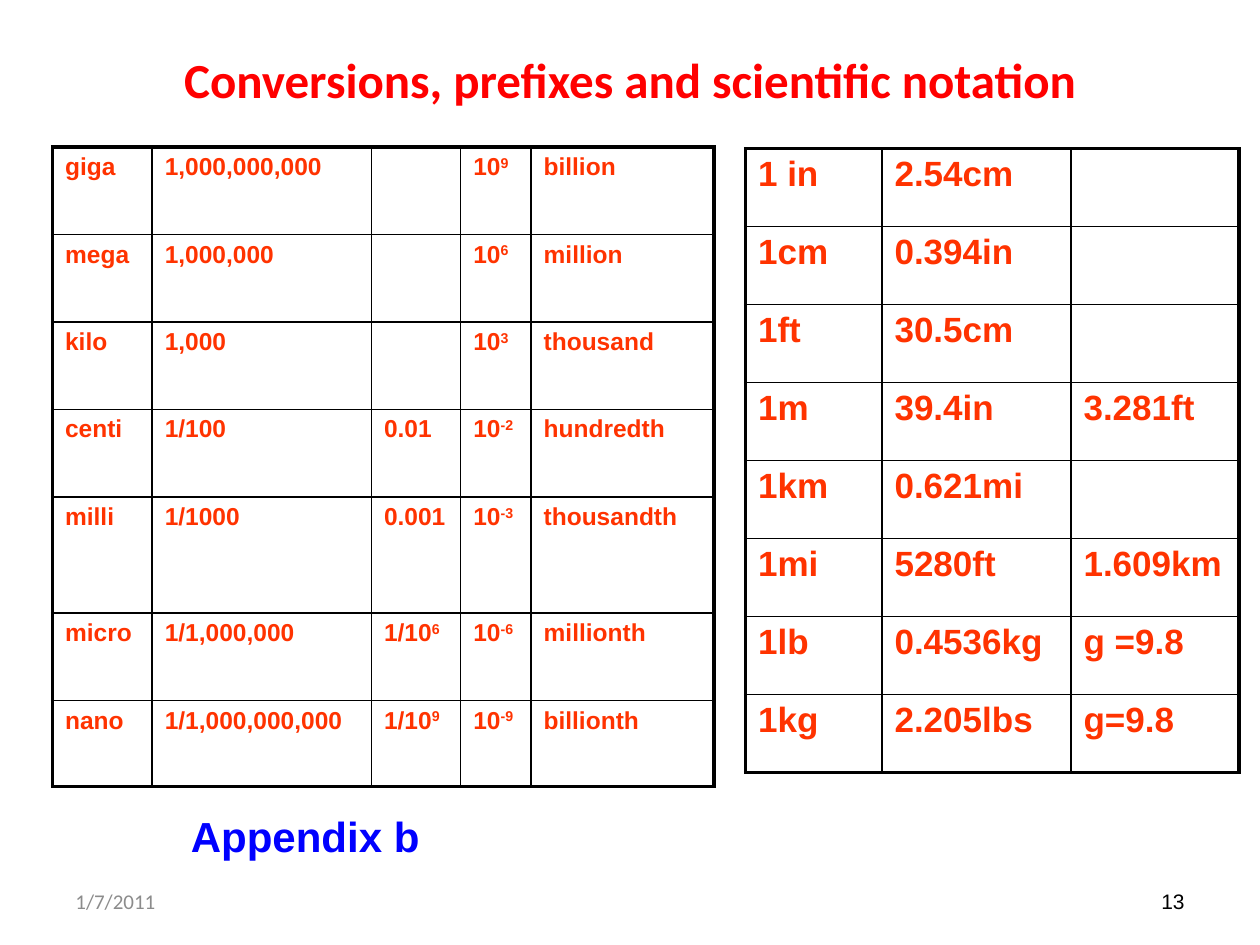
from lxml import etree
from pptx import Presentation
from pptx.dml.color import RGBColor
from pptx.enum.text import MSO_ANCHOR, PP_ALIGN
from pptx.oxml.ns import qn
from pptx.util import Pt

LEFT, MID, RIGHT = PP_ALIGN.LEFT, PP_ALIGN.CENTER, PP_ALIGN.RIGHT
TOP, CENTER = MSO_ANCHOR.TOP, MSO_ANCHOR.MIDDLE

POWERS = [
    ["giga", "1,000,000,000", "", "10^9", "billion"],
    ["mega", "1,000,000", "", "10^6", "million"],
    ["kilo", "1,000", "", "10^3", "thousand"],
    ["centi", "1/100", "0.01", "10^-2", "hundredth"],
    ["milli", "1/1000", "0.001", "10^-3", "thousandth"],
    ["micro", "1/1,000,000", "1/10^6", "10^-6", "millionth"],
    ["nano", "1/1,000,000,000", "1/10^9", "10^-9", "billionth"],
]
UNITS = [
    ["1 in", "2.54cm", ""],
    ["1cm", "0.394in", ""],
    ["1ft", "30.5cm", ""],
    ["1m", "39.4in", "3.281ft"],
    ["1km", "0.621mi", ""],
    ["1mi", "5280ft", "1.609km"],
    ["1lb", "0.4536kg", "g =9.8"],
    ["1kg", "2.205lbs", "g=9.8"],
]


def color(code):
    """Turn a hex string into a colour."""
    return RGBColor.from_string(code)


def style(para, size, face, code, bold):
    """Format every run of a paragraph."""
    for run in para.runs:
        font = run.font
        font.size, font.name, font.bold = Pt(size), face, bold
        font.color.rgb = color(code)


def label(slide, box, text, size, face, code, bold=False,
          align=LEFT, anchor=CENTER, wrap=True):
    """Place one line of text in a box."""
    frame = slide.shapes.add_textbox(*map(Pt, box)).text_frame
    frame.word_wrap = wrap
    frame.vertical_anchor = anchor
    frame.text = text
    para = frame.paragraphs[0]
    para.alignment = align
    style(para, size, face, code, bold)


def border(cell, side, width):
    """Draw one black side of a cell."""
    props = cell._tc.get_or_add_tcPr()
    line = etree.SubElement(props, qn("a:ln" + side), w=str(Pt(width)))
    fill = etree.SubElement(line, qn("a:solidFill"))
    etree.SubElement(fill, qn("a:srgbClr"), val="000000")


def write(cell, text, size):
    """Write a cell, raising whatever follows a caret."""
    base, _, power = text.partition("^")
    cell.text_frame.text = base
    para = cell.text_frame.paragraphs[0]
    if power:
        run = para.add_run()
        run.text = power
        run._r.get_or_add_rPr().set("baseline", "30000")
    style(para, size, "Arial", "FF3300", True)


def grid(slide, left, top, cols, rows, data, size):
    """Build a table with a heavy frame and thin inner lines."""
    box = left, top, sum(cols), sum(rows)
    table = slide.shapes.add_table(
        len(rows), len(cols), *map(Pt, box)).table
    table.first_row = table.horz_banding = False
    for col, width in zip(table.columns, cols):
        col.width = Pt(width)
    for row, height in zip(table.rows, rows):
        row.height = Pt(height)
    for y, line in enumerate(data):
        for x, text in enumerate(line):
            cell = table.cell(y, x)
            edges = {"L": x == 0, "R": x == len(cols) - 1,
                     "T": y == 0, "B": y == len(rows) - 1}
            for side, outer in edges.items():
                border(cell, side, 2.25 if outer else 1)
            cell.fill.background()
            write(cell, text, size)


def footer(slide, left, top, width, height):
    """Place the date and the page number at the two ends of a strip."""
    part = 168
    label(slide, (left, top, part, height), "1/7/2011", 12, "Calibri", "8C8C8C")
    label(slide, (left + width - part, top, part, height), "13", 12,
          "Arial", "000000", align=RIGHT)


def main():
    """Build the slide and save it."""
    deck = Presentation()
    deck.slide_width, deck.slide_height = Pt(720), Pt(540)
    slide = deck.slides.add_slide(deck.slide_layouts[6])
    label(slide, (36, 0, 648, 90),
          "Conversions, prefixes and scientific notation",
          28, "Calibri", "FF0000", True, MID)
    grid(slide, 30, 84, [57, 125.3, 51, 40.2, 104.5],
         [50, 50, 50, 50, 66.5, 50, 49], POWERS, 14)
    grid(slide, 426, 85, [78, 108, 96], [44.55] * len(UNITS), UNITS, 20)
    label(slide, (102, 459.5, 145, 36), "Appendix b", 24, "Arial",
          "0000FF", True, anchor=TOP, wrap=False)
    footer(slide, 36, 500.5, 648, 28.75)
    deck.save("out.pptx")


if __name__ == "__main__":
    main()
